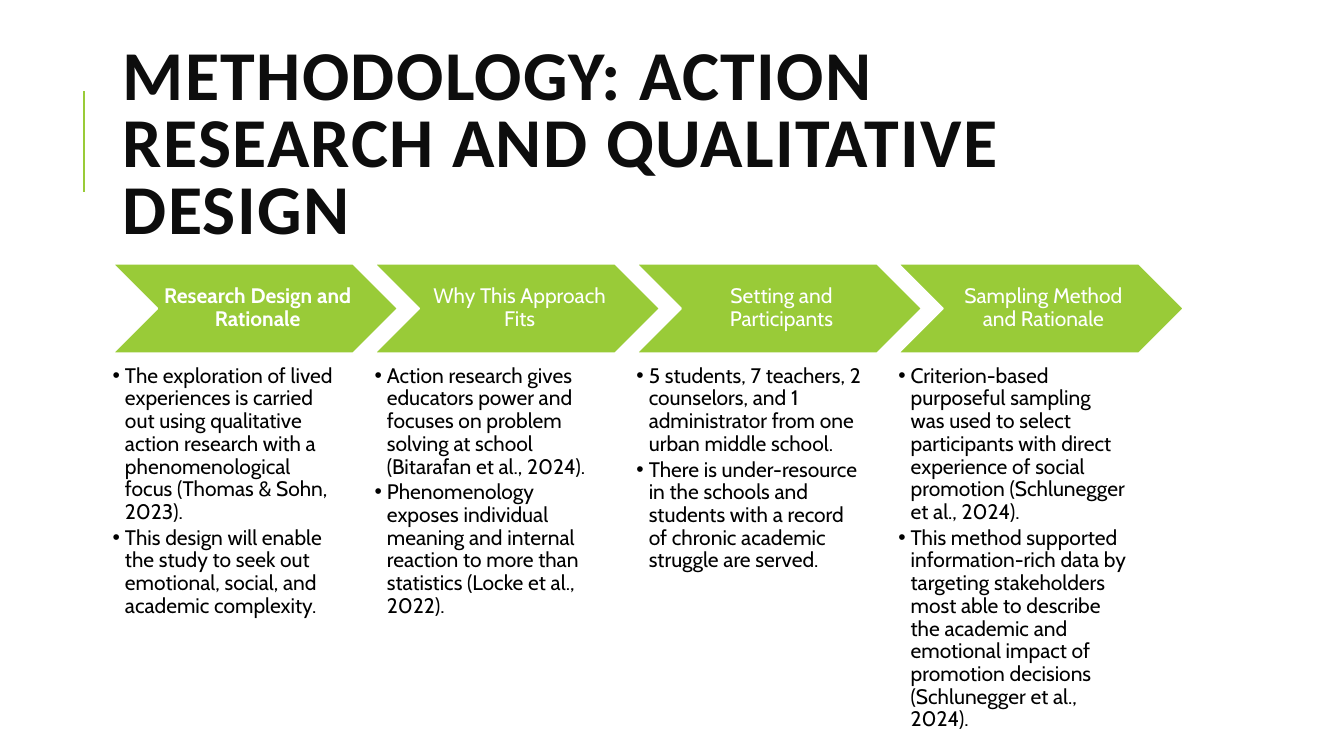
from lxml.etree import SubElement
from pptx import Presentation
from pptx.dml.color import RGBColor
from pptx.enum.shapes import MSO_CONNECTOR as Connector, MSO_SHAPE as Shape
from pptx.enum.text import MSO_ANCHOR as Anchor, MSO_AUTO_SIZE as AutoSize, PP_ALIGN as Align
from pptx.oxml.ns import qn
from pptx.util import Cm, Pt

TITLE = "METHODOLOGY: ACTION RESEARCH AND QUALITATIVE DESIGN"
STEPS = [
    ("Research Design and Rationale", [
        "The exploration of lived experiences is carried out using qualitative action research "
        "with a phenomenological focus (Thomas & Sohn, 2023).",
        "This design will enable the study to seek out emotional, social, and academic complexity.",
    ]),
    ("Why This Approach Fits", [
        "Action research gives educators power and focuses on problem solving at school "
        "(Bitarafan et al., 2024).",
        "Phenomenology exposes individual meaning and internal reaction to more than statistics "
        "(Locke et al., 2022).",
    ]),
    ("Setting and Participants", [
        "5 students, 7 teachers, 2 counselors, and 1 administrator from one urban middle school.",
        "There is under-resource in the schools and students with a record of chronic academic "
        "struggle are served.",
    ]),
    ("Sampling Method and Rationale", [
        "Criterion-based purposeful sampling was used to select participants with direct "
        "experience of social promotion (Schlunegger et al., 2024).",
        "This method supported information-rich data by targeting stakeholders most able to "
        "describe the academic and emotional impact of promotion decisions "
        "(Schlunegger et al., 2024).",
    ]),
]
COLORS = {"green": "99CB38", "title": "0D0D0D", "body": "000000", "white": "FFFFFF"}
LEFT, STEP_PITCH = 2.84, 6.6
CHEVRON_TOP, CHEVRON_WIDTH, CHEVRON_HEIGHT = 6.65, 7.19, 2.25
LIST_TOP, LIST_WIDTH, LIST_HEIGHT = 9.2, 5.77, 8.03
BULLET_INDENT = Cm(0.31)


def color(name):
    return RGBColor.from_string(COLORS[name])


def place(shape, left, top, width, height):
    shape.left, shape.top, shape.width, shape.height = map(Cm, (left, top, width, height))


def add_bullet(paragraph):
    properties = paragraph._p.get_or_add_pPr()
    properties.set("marL", str(BULLET_INDENT))
    properties.set("indent", str(-BULLET_INDENT))
    SubElement(properties, qn("a:buFont"), typeface="Arial")
    SubElement(properties, qn("a:buChar"), char="•")


def write(shape, texts, *, ink, size=15, font="Cabin", bold=False, align=Align.LEFT,
          anchor=Anchor.MIDDLE, insets=(0.25, 0.13, 0.25, 0.13), line_spacing=0.9,
          space_after=0, bullets=False, tracking=None):
    """Fill a shape with one paragraph per text; insets are left, top, right, bottom in cm."""
    frame = shape.text_frame
    frame.word_wrap, frame.auto_size, frame.vertical_anchor = True, AutoSize.NONE, anchor
    (frame.margin_left, frame.margin_top,
     frame.margin_right, frame.margin_bottom) = map(Cm, insets)
    for index, text in enumerate(texts):
        paragraph = frame.add_paragraph() if index else frame.paragraphs[0]
        if bullets:
            paragraph.level = 1
            add_bullet(paragraph)
        paragraph.alignment, paragraph.line_spacing = align, line_spacing
        paragraph.space_before, paragraph.space_after = Pt(0), Pt(space_after)
        run = paragraph.add_run()
        run.text = text
        run.font.name, run.font.size, run.font.bold = font, Pt(size), bold
        run.font.color.rgb = color(ink)
        if tracking:
            run.font._element.set("spc", str(tracking * 100))


def add_accent_line(slide):
    line = slide.shapes.add_connector(
        Connector.STRAIGHT, Cm(2.11), Cm(4.83), Cm(2.11), Cm(2.29))
    line.line.color.rgb, line.line.width = color("green"), Pt(1.5)
    SubElement(line._element.spPr, qn("a:effectLst"))


def add_chevron(slide, left, heading, bold):
    chevron = slide.shapes.add_shape(
        Shape.CHEVRON, Cm(left), Cm(CHEVRON_TOP), Cm(CHEVRON_WIDTH), Cm(CHEVRON_HEIGHT))
    chevron.shadow.inherit = False
    chevron.fill.solid()
    chevron.fill.fore_color.rgb = color("green")
    chevron.line.color.rgb, chevron.line.width = color("white"), Pt(1.25)
    write(chevron, [heading], ink="white", bold=bold, align=Align.CENTER,
          insets=(0.17, 0.05, 0.05, 0.05))


def main():
    presentation = Presentation()
    presentation.slide_width, presentation.slide_height = Cm(33.87), Cm(19.05)
    comparison_layout = presentation.slide_layouts[4]
    slide = presentation.slides.add_slide(comparison_layout)
    title, *lists = slide.placeholders

    add_accent_line(slide)
    place(title, LEFT, 1.63, 27, 4.17)
    write(title, [TITLE], ink="title", size=50, font="Calibri", bold=True,
          line_spacing=0.8, tracking=1)

    for index, (body, (heading, points)) in enumerate(zip(lists, STEPS)):
        left = LEFT + index * STEP_PITCH
        add_chevron(slide, left, heading, bold=index == 0)
        place(body, left, LIST_TOP, LIST_WIDTH, LIST_HEIGHT)
        write(body, points, ink="body", anchor=Anchor.TOP, insets=(0, 0, 0, 0),
              space_after=2.25, bullets=True)

    presentation.save("out.pptx")


if __name__ == "__main__":
    main()
